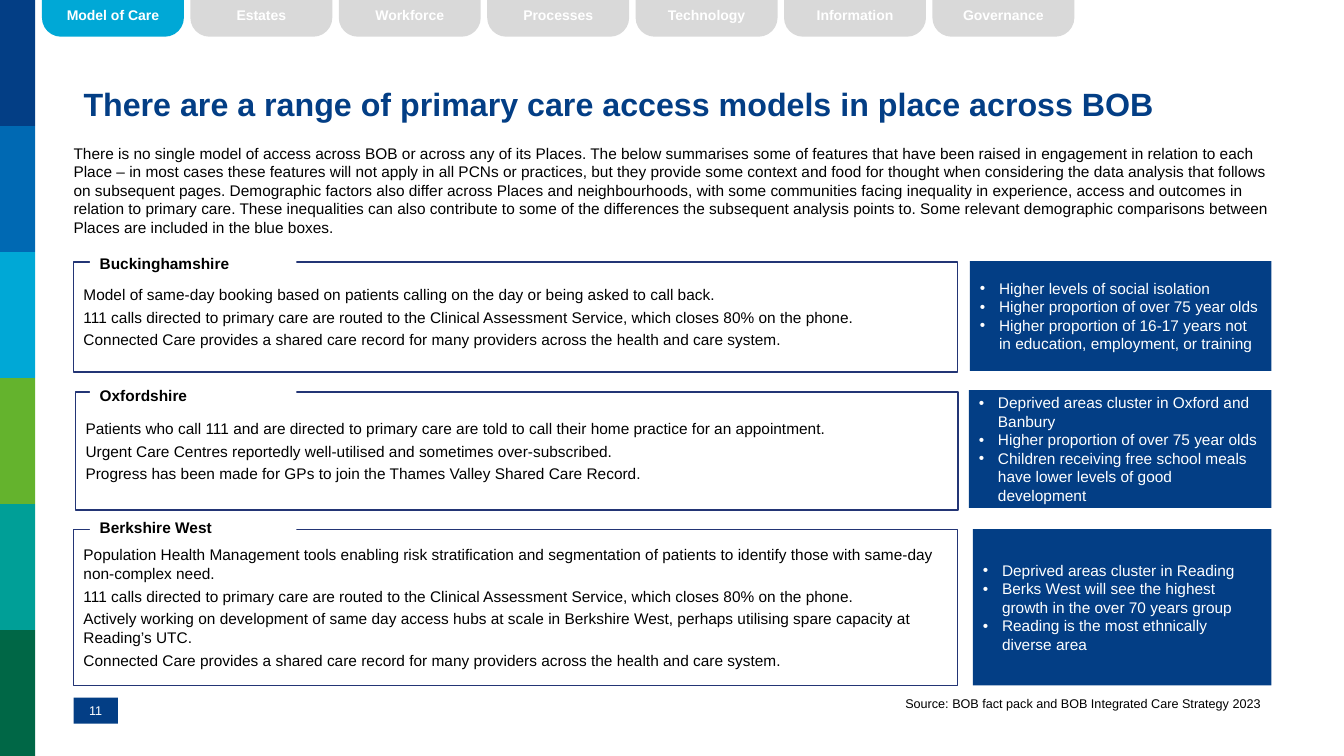
from pptx import Presentation
from pptx.dml.color import RGBColor
from pptx.enum.shapes import MSO_SHAPE
from pptx.enum.text import MSO_ANCHOR, PP_ALIGN
from pptx.oxml.ns import qn
from pptx.util import Inches, Pt

RECTANGLE, TAB = MSO_SHAPE.RECTANGLE, MSO_SHAPE.ROUND_2_SAME_RECTANGLE
TOP, MIDDLE = MSO_ANCHOR.TOP, MSO_ANCHOR.MIDDLE
LEFT, CENTER, RIGHT = PP_ALIGN.LEFT, PP_ALIGN.CENTER, PP_ALIGN.RIGHT
WIDTH, HEIGHT = 13.33, 7.5
MARGIN = 0.73
COLORS = {
    "navy": "033E85", "blue": "0069B3", "cyan": "00A8D6", "green": "64B32D",
    "teal": "009F97", "forest": "006746", "outline": "233575",
    "grey": "D9D9D9", "white": "FFFFFF", "black": "000000",
}

deck = Presentation()
deck.slide_width, deck.slide_height = Inches(WIDTH), Inches(HEIGHT)
page = deck.slides.add_slide(deck.slide_layouts[6])


def add_panel(left, top, width, height, fill, line=None, line_width=1, kind=RECTANGLE):
    box = page.shapes.add_shape(kind, Inches(left), Inches(top), Inches(width), Inches(height))
    box.shadow.inherit = False
    box.fill.solid()
    box.fill.fore_color.rgb = RGBColor.from_string(COLORS[fill])
    if line:
        box.line.color.rgb = RGBColor.from_string(COLORS[line])
        box.line.width = Pt(line_width)
    else:
        box.line.fill.background()
    return box


def write(box, *texts, size=11, color="black", bold=False, align=LEFT,
          anchor=MIDDLE, after=0, bullet=False, inset=None):
    frame = box.text_frame
    frame.word_wrap = True
    frame.vertical_anchor = anchor
    if inset is not None:
        frame.margin_left = frame.margin_right = Inches(inset)
        frame.margin_top = frame.margin_bottom = Inches(inset)
    for index, text in enumerate(texts):
        para = frame.add_paragraph() if index else frame.paragraphs[0]
        if bullet:
            props = para._p.get_or_add_pPr()
            props.set("marL", str(Inches(0.19)))
            props.set("indent", str(-Inches(0.19)))
            props.append(props.makeelement(qn("a:buFont"), {"typeface": "Arial"}))
            props.append(props.makeelement(qn("a:buChar"), {"char": "•"}))
        para.alignment = align
        para.space_after = Pt(after)
        span = para.add_run()
        span.text = text
        span.font.name = "Arial"
        span.font.size = Pt(size)
        span.font.bold = bold
        span.font.color.rgb = RGBColor.from_string(COLORS[color])


# Colour strip down the left edge
bands = ["navy", "blue", "cyan", "green", "teal", "forest"]
band_height = HEIGHT / len(bands)
for row, color in enumerate(bands):
    add_panel(0, row * band_height, 0.35, band_height, color)

# Section tabs, the current one highlighted
tabs = ["Model of Care", "Estates", "Workforce", "Processes",
        "Technology", "Information", "Governance"]
for column, name in enumerate(tabs):
    fill = "grey" if column else "cyan"
    tab = add_panel(0.43 + column * 1.472, 0, 1.38, 0.35, fill, fill, 2, TAB)
    tab.adjustments[0], tab.adjustments[1] = 0, 0.5
    write(tab, name, size=10, color="white", bold=True, align=CENTER, inset=0)

# Title and introduction
title = page.shapes.add_textbox(Inches(MARGIN), Inches(0.77), Inches(11.89), Inches(0.51))
write(title, "There are a range of primary care access models in place across BOB",
      size=23, color="navy", bold=True)
intro = page.shapes.add_textbox(Inches(MARGIN), Inches(1.43), Inches(11.9), Inches(0.93))
write(intro,
      "There is no single model of access across BOB or across any of its Places. The below "
      "summarises some of features that have been raised in engagement in relation to each Place – "
      "in most cases these features will not apply in all PCNs or practices, but they provide some "
      "context and food for thought when considering the data analysis that follows on subsequent "
      "pages. Demographic factors also differ across Places and neighbourhoods, with some communities "
      "facing inequality in experience, access and outcomes in relation to primary care. These "
      "inequalities can also contribute to some of the differences the subsequent analysis points to. "
      "Some relevant demographic comparisons between Places are included in the blue boxes.",
      anchor=TOP, after=6, inset=0)

# Places: name, panel left, top and height, label top, blue box left and top, features, demographics
calls = ("111 calls directed to primary care are routed to the Clinical Assessment Service, "
         "which closes 80% on the phone.")
shared = ("Connected Care provides a shared care record for many providers across the health "
          "and care system.")
older = "Higher proportion of over 75 year olds"
places = [
    ("Buckinghamshire", 0.73, 2.6, 1.09, 2.47, 9.62, 2.59,
     ["Model of same-day booking based on patients calling on the day or being asked to call back.",
      calls, shared],
     ["Higher levels of social isolation", older,
      "Higher proportion of 16-17 years not in education, employment, or training"]),
    ("Oxfordshire", 0.75, 3.89, 1.17, 3.78, 9.61, 3.87,
     ["Patients who call 111 and are directed to primary care are told to call their home practice "
      "for an appointment.",
      "Urgent Care Centres reportedly well-utilised and sometimes over-subscribed.",
      "Progress has been made for GPs to join the Thames Valley Shared Care Record."],
     ["Deprived areas cluster in Oxford and Banbury", older,
      "Children receiving free school meals have lower levels of good development"]),
    ("Berkshire West", 0.73, 5.25, 1.55, 5.09, 9.65, 5.25,
     ["Population Health Management tools enabling risk stratification and segmentation of patients "
      "to identify those with same-day non-complex need.",
      calls,
      "Actively working on development of same day access hubs at scale in Berkshire West, perhaps "
      "utilising spare capacity at Reading’s UTC.",
      shared],
     ["Deprived areas cluster in Reading",
      "Berks West will see the highest growth in the over 70 years group",
      "Reading is the most ethnically diverse area"]),
]
panel_right, blue_right = 9.5, 12.61
for name, left, top, height, label_top, blue_left, blue_top, features, demographics in places:
    panel = add_panel(left, top, panel_right - left, height, "white", "outline")
    write(panel, *features, after=3)
    label = add_panel(0.89, label_top, 2.05, 0.29, "white")
    write(label, name, bold=True)
    blue_box = add_panel(blue_left, blue_top, blue_right - blue_left, height, "navy")
    write(blue_box, *demographics, color="white", bullet=True)

# Page number and source
number = add_panel(MARGIN, 6.92, 0.44, 0.26, "navy")
write(number, "11", size=9, color="white", align=CENTER, inset=0)
source = page.shapes.add_textbox(Inches(8.25), Inches(6.85), Inches(4.35), Inches(0.25))
write(source, "Source: BOB fact pack and BOB Integrated Care Strategy 2023",
      size=9, align=RIGHT, anchor=TOP)

deck.save("out.pptx")
